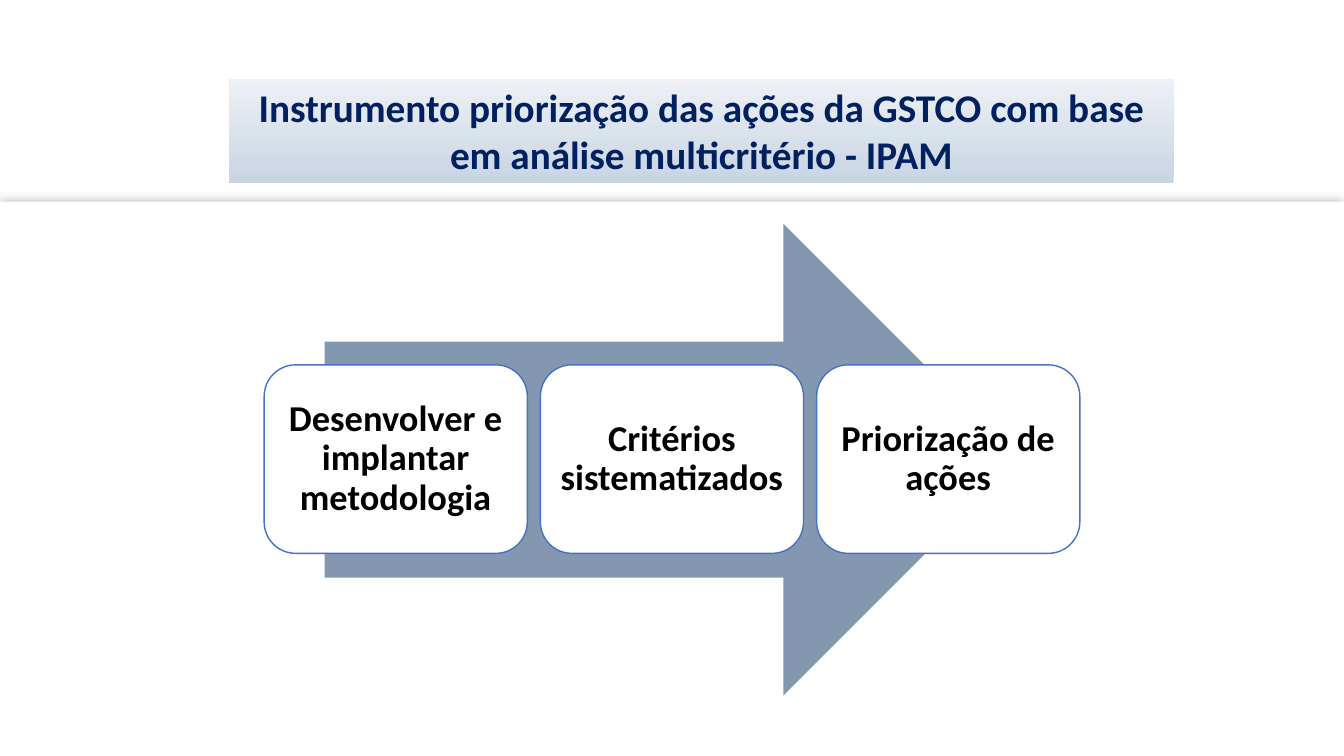
import pptx
import pptx.util
import pptx.dml.color
import pptx.enum.shapes
import pptx.enum.text
import pptx.oxml
import pptx.oxml.ns

Inches, Pt = pptx.util.Inches, pptx.util.Pt
SHAPE = pptx.enum.shapes.MSO_SHAPE
ANCHOR = pptx.enum.text.MSO_ANCHOR


def rgb(value):
    return pptx.dml.color.RGBColor.from_string(value)


def write(sp, text, size, color, spacing, anchor):
    tf = sp.text_frame
    tf.word_wrap = True
    tf.auto_size = pptx.enum.text.MSO_AUTO_SIZE.NONE
    tf.vertical_anchor = anchor
    p = tf.paragraphs[0]
    p.alignment = pptx.enum.text.PP_ALIGN.CENTER
    p.line_spacing = spacing
    r = p.add_run()
    r.text = text
    r.font.name = "Calibri"
    r.font.size = Pt(size)
    r.font.bold = True
    r.font.color.rgb = rgb(color)


prs = pptx.Presentation()
prs.slide_width, prs.slide_height = Inches(13.33), Inches(7.5)
s = prs.slides.add_slide(prs.slide_layouts[5])

# Title on a vertical gradient
title = s.shapes.title
title.left, title.top = Inches(2.27), Inches(0.78)
title.width, title.height = Inches(9.37), Inches(1.04)
title.fill.gradient()
title.fill.gradient_angle = 90
for stop, color in zip(title.fill.gradient_stops, ["C9D4E3", "EDF1F5"]):
    stop.color.rgb = rgb(color)
write(title, "Instrumento priorização das ações da GSTCO com base em análise multicritério - IPAM",
      28, "002060", 1.0, ANCHOR.TOP)

# White content panel with a soft shadow along its top edge
panel = s.shapes.add_shape(SHAPE.RECTANGLE, 0, Inches(2), Inches(13.33), Inches(5.5))
panel.fill.solid()
panel.fill.fore_color.rgb = rgb("FFFFFF")
panel.line.fill.background()
panel._element.spPr.append(pptx.oxml.parse_xml(
    f'<a:effectLst {pptx.oxml.ns.nsdecls("a")}>'
    f'<a:outerShdw blurRad="{Pt(7)}" dist="0" dir="0" algn="ctr" rotWithShape="0">'
    '<a:srgbClr val="A6A6A6"><a:alpha val="75000"/></a:srgbClr>'
    '</a:outerShdw></a:effectLst>'))

# Process arrow behind the three steps
arrow = s.shapes.add_shape(SHAPE.RIGHT_ARROW, Inches(3.22), Inches(2.22), Inches(6.89), Inches(4.68))
arrow.shadow.inherit = False
arrow.fill.solid()
arrow.fill.fore_color.rgb = rgb("8497B0")
arrow.line.fill.background()

steps = ["Desenvolver e implantar metodologia", "Critérios sistematizados", "Priorização de ações"]
for i, step in enumerate(steps):
    box = s.shapes.add_shape(SHAPE.ROUNDED_RECTANGLE, Inches(2.62 + 2.74 * i), Inches(3.62),
                             Inches(2.61), Inches(1.87))
    box.shadow.inherit = False
    box.fill.solid()
    box.fill.fore_color.rgb = rgb("FFFFFF")
    box.line.color.rgb = rgb("4472C4")
    box.line.width = Pt(1)
    tf = box.text_frame
    tf.margin_left = tf.margin_right = Inches(0.1)
    write(box, step, 26, "000000", 0.9, ANCHOR.MIDDLE)

prs.save("out.pptx")
